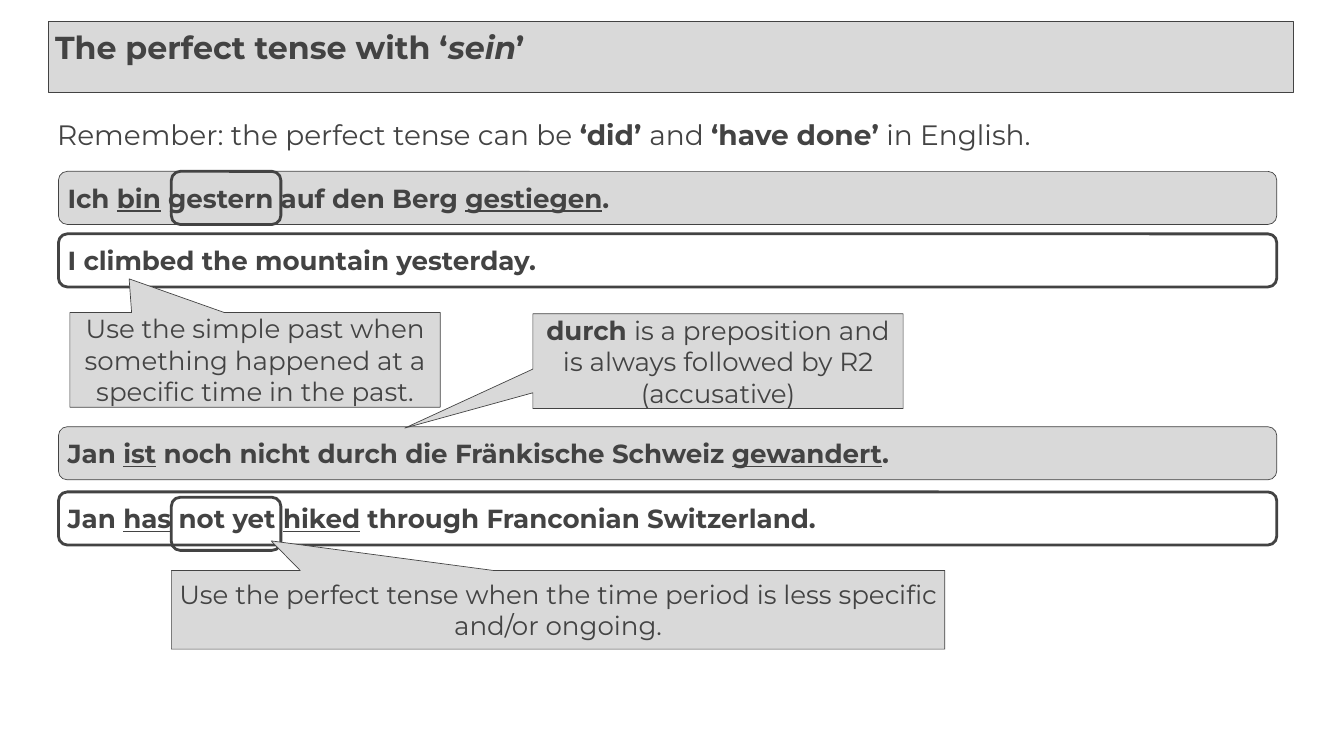
from pptx import Presentation
from pptx.dml.color import RGBColor
from pptx.enum.shapes import MSO_SHAPE as SHAPE
from pptx.enum.text import MSO_ANCHOR as ANCHOR, PP_ALIGN as ALIGN
from pptx.util import Pt

PX = 9144  # EMU per px, 100 px to the inch
FONT = "Montserrat"
INK = RGBColor(0x43, 0x43, 0x43)
GREY = RGBColor(0xD9, 0xD9, 0xD9)
WHITE = RGBColor(0xFF, 0xFF, 0xFF)
THIN, THICK = 0.75, 3

BAR_X, BAR_W, BAR_H = 87, 1813, 79
MARK_X, MARK_W = 255, 163


def px(*lengths):
    return [n * PX for n in lengths]


def write(sp, runs, size=28, anchor=ANCHOR.MIDDLE, align=ALIGN.LEFT):
    """Fill a shape with (text, style) runs; style letters are b, i and u."""
    tf = sp.text_frame
    tf.word_wrap = True
    tf.vertical_anchor = anchor
    tf.margin_left = tf.margin_right = tf.margin_top = tf.margin_bottom = 10 * PX
    p = tf.paragraphs[0]
    p.alignment = align
    for text, style in runs:
        r = p.add_run()
        r.text = text
        font = r.font
        font.name, font.size = FONT, Pt(size)
        font.color.rgb = INK
        font.bold = "b" in style
        font.italic = "i" in style
        font.underline = "u" in style


def add_box(s, kind, box, fill=GREY, line=THIN):
    sp = s.shapes.add_shape(kind, *px(*box))
    sp.shadow.inherit = False
    if fill is None:
        sp.fill.background()
    else:
        sp.fill.solid()
        sp.fill.fore_color.rgb = fill
    sp.line.color.rgb = INK
    sp.line.width = Pt(line)
    return sp


def add_german(s, y, runs):
    write(add_box(s, SHAPE.ROUNDED_RECTANGLE, (BAR_X, y, BAR_W, BAR_H)), runs)


def add_english(s, y, runs):
    box = (BAR_X, y, BAR_W, BAR_H)
    write(add_box(s, SHAPE.ROUNDED_RECTANGLE, box, WHITE, THICK), runs)


def add_marker(s, y):
    box = (MARK_X, y, MARK_W, BAR_H)
    add_box(s, SHAPE.ROUNDED_RECTANGLE, box, None, THICK)


def add_callout(s, box, tip, runs):
    """tip is the pointer's end, as shares of the size from the centre."""
    sp = add_box(s, SHAPE.ROUNDED_RECTANGULAR_CALLOUT, box)
    for i, value in enumerate((*tip, 0)):
        sp.adjustments[i] = value
    write(sp, runs, align=ALIGN.CENTER)


def main():
    prs = Presentation()
    prs.slide_width, prs.slide_height = px(2000, 1125)
    s = prs.slides.add_slide(prs.slide_layouts[6])

    # Title and reminder
    title = add_box(s, SHAPE.RECTANGLE, (72, 32, 1852, 106))
    write(title, [("The perfect tense with ‘", "b"), ("sein", "bi"), ("’", "b")],
          34, ANCHOR.TOP)
    reminder = s.shapes.add_textbox(*px(75, 165, 1852, 774))
    write(reminder, [("Remember: the perfect tense can be ", ""), ("‘did’ ", "b"),
                     ("and ", ""), ("‘have done’", "b"), (" in English.", "")],
          30, ANCHOR.TOP)

    # First example: simple past
    add_german(s, 255, [("Ich ", "b"), ("bin", "bu"),
                        (" gestern auf den Berg ", "b"),
                        ("gestiegen", "bu"), (".", "b")])
    add_english(s, 348, [("I climbed the mountain yesterday.", "b")])
    add_callout(s, (104, 465, 551, 141), (-0.34, -0.855),
                [("Use the simple past when something happened at a "
                  "specific time in the past.", "")])

    # Second example: perfect
    add_german(s, 635, [("Jan ", "b"), ("ist", "bu"),
                        (" noch nicht durch die Fränkische Schweiz ", "b"),
                        ("gewandert", "bu"), (".", "b")])
    add_callout(s, (793, 467, 551, 141), (-0.846, 0.706),
                [("durch ", "b"),
                 ("is a preposition and is always followed by R2 (accusative)", "")])
    add_english(s, 732, [("Jan ", "b"), ("has", "bu"), (" not yet ", "b"),
                         ("hiked", "bu"),
                         (" through Franconian Switzerland.", "b")])

    # Frames round the time phrases
    for y in (255, 740):
        add_marker(s, y)

    add_callout(s, (255, 849, 1151, 117), (-0.371, -0.877),
                [("Use the perfect tense when the time period is less specific "
                  "and/or ongoing.", "")])

    prs.save("out.pptx")


if __name__ == "__main__":
    main()
